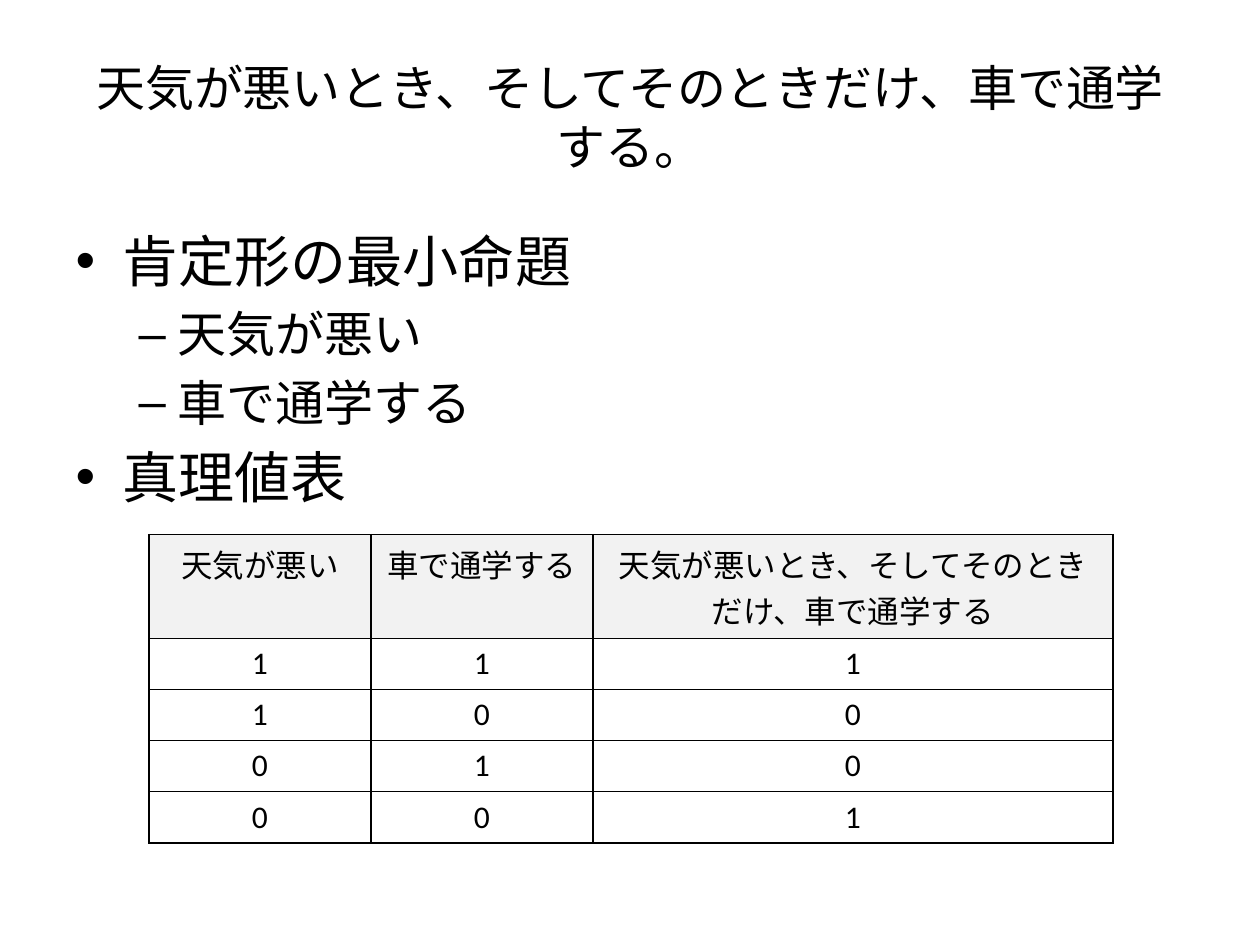
from itertools import product

from lxml.etree import SubElement
from pptx import Presentation
from pptx.dml.color import RGBColor
from pptx.enum.text import MSO_ANCHOR, PP_ALIGN
from pptx.oxml.ns import qn
from pptx.util import Pt

BLACK = RGBColor(0x00, 0x00, 0x00)
HEADER_GREY = RGBColor(0xF2, 0xF2, 0xF2)
FONT = "Calibri"

WEATHER = "天気が悪い"
DRIVING = "車で通学する"
STATEMENT = "天気が悪いとき、そしてそのときだけ、車で通学する"

BODY_SIZES = (32, 28)  # by outline level
OUTLINE = [
    (0, "肯定形の最小命題"),
    (1, WEATHER),
    (1, DRIVING),
    (0, "真理値表"),
]
COLUMN_WIDTHS = (126.9, 126.9, 297.2)
ROW_HEIGHT = 29.2


def add_text(paragraph, text, size):
    run = paragraph.add_run()
    run.text = text
    run.font.name = FONT
    run.font.size = Pt(size)
    run.font.color.rgb = BLACK


def place(placeholder, left, top, width, height):
    placeholder.left, placeholder.top = Pt(left), Pt(top)
    placeholder.width, placeholder.height = Pt(width), Pt(height)


def fill_title(title):
    place(title, 36, 21.6, 648, 90)
    frame = title.text_frame
    frame.vertical_anchor = MSO_ANCHOR.MIDDLE
    heading = frame.paragraphs[0]
    heading.alignment = PP_ALIGN.CENTER
    add_text(heading, STATEMENT + "。", 28)


def fill_outline(body):
    place(body, 36, 126, 648, 356.4)
    frame = body.text_frame
    for index, (level, text) in enumerate(OUTLINE):
        item = frame.add_paragraph() if index else frame.paragraphs[0]
        item.level = level
        add_text(item, text, BODY_SIZES[level])


def add_borders(cell):
    properties = cell._tc.get_or_add_tcPr()
    for side in ("lnL", "lnR", "lnT", "lnB"):
        line = SubElement(properties, qn(f"a:{side}"), w=str(Pt(1)))
        solid = SubElement(line, qn("a:solidFill"))
        SubElement(solid, qn("a:srgbClr"), val=str(BLACK))


def fill_cell(cell, text, is_header):
    add_borders(cell)
    if is_header:
        cell.fill.solid()
        cell.fill.fore_color.rgb = HEADER_GREY
    else:
        cell.fill.background()
    paragraph = cell.text_frame.paragraphs[0]
    paragraph.alignment = PP_ALIGN.CENTER
    add_text(paragraph, text, 18)


def add_truth_table(slide):
    # The biconditional holds when both propositions have the same value
    rows = [(WEATHER, DRIVING, STATEMENT)]
    rows += [(p, q, int(p == q)) for p, q in product((1, 0), repeat=2)]
    table = slide.shapes.add_table(
        len(rows), len(COLUMN_WIDTHS), Pt(85), Pt(305.5),
        Pt(sum(COLUMN_WIDTHS)), Pt(ROW_HEIGHT * len(rows))).table
    table.first_row = False
    table.horz_banding = False
    for column, width in zip(table.columns, COLUMN_WIDTHS):
        column.width = Pt(width)
    for r, values in enumerate(rows):
        table.rows[r].height = Pt(ROW_HEIGHT)
        for c, value in enumerate(values):
            fill_cell(table.cell(r, c), str(value), r == 0)


def main():
    prs = Presentation()
    prs.slide_width, prs.slide_height = Pt(720), Pt(540)
    slide = prs.slides.add_slide(prs.slide_layouts[1])

    # Statement and its parts
    fill_title(slide.shapes.title)
    fill_outline(slide.placeholders[1])

    # Truth table
    add_truth_table(slide)

    prs.save("out.pptx")


if __name__ == "__main__":
    main()
